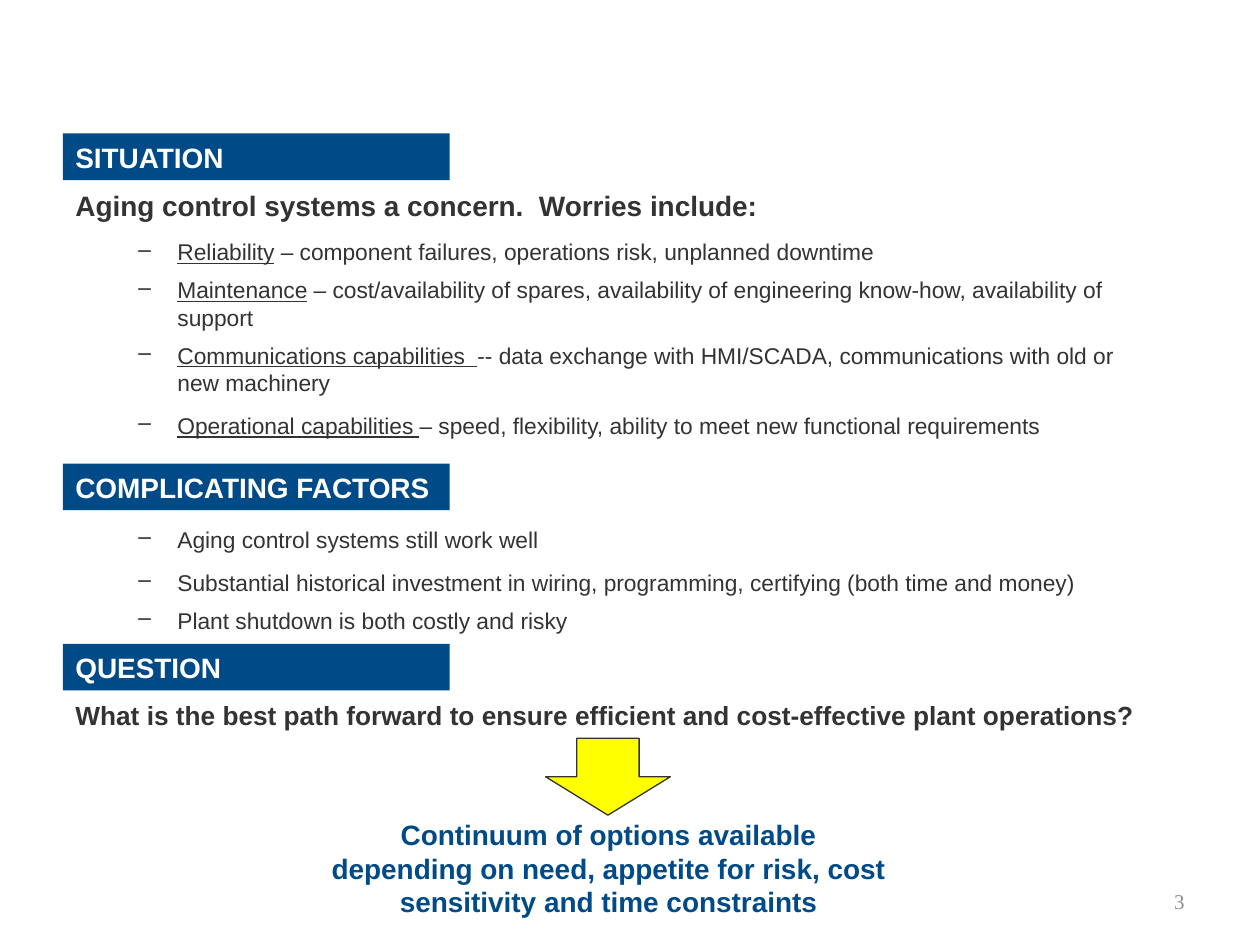
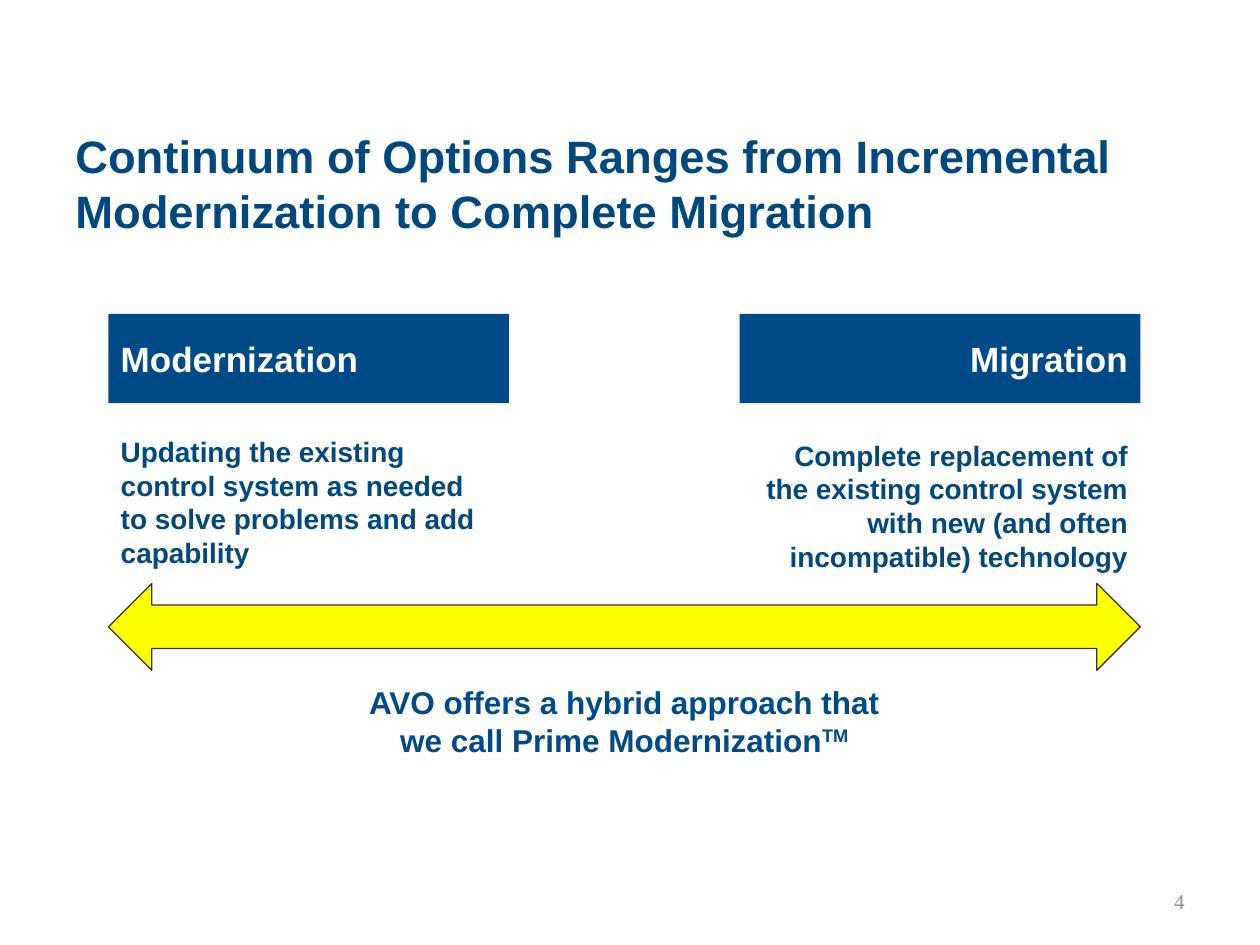
from dataclasses import dataclass

import pptx
import pptx.dml.color
import pptx.enum.shapes
import pptx.enum.text
import pptx.oxml
import pptx.oxml.ns
import pptx.util

Inches = pptx.util.Inches
Pt = pptx.util.Pt
SHAPE = pptx.enum.shapes.MSO_SHAPE
ALIGN = pptx.enum.text.PP_ALIGN
ANCHOR = pptx.enum.text.MSO_ANCHOR


@dataclass(frozen=True)
class Theme:
    font: str = "Arial"
    number_font: str = "Times New Roman"
    band: str = "004B87"
    navy: str = "00487D"
    ink: str = "333333"
    arrow: str = "FFFF00"
    white: str = "FFFFFF"
    grey: str = "909090"
    title: float = 25.9
    option: float = 20
    offer: float = 18
    heading: float = 16
    question: float = 15
    bullet: float = 13
    number: float = 12


T = Theme()
MARGIN = 0.5
BODY_W = 8.65
BAND_SIZE = (3.07, 0.37)


def rgb(value):
    return pptx.dml.color.RGBColor.from_string(value)


def set_format(target, **values):
    for name, value in values.items():
        setattr(target, name, value)


def add_run(p, text, size, color, bold=True, font=T.font, **extra):
    r = p.add_run()
    r.text = text
    set_format(r.font, size=Pt(size), bold=bold, name=font, **extra)
    r.font.color.rgb = rgb(color)
    return r


def add_text(s, box, text, size, color, align=ALIGN.LEFT, anchor=ANCHOR.TOP, **font):
    sp = s.shapes.add_textbox(*map(Inches, box))
    set_format(sp.text_frame, word_wrap=True, vertical_anchor=anchor)
    p = sp.text_frame.paragraphs[0]
    p.alignment = align
    if text:
        add_run(p, text, size, color, **font)
    return sp.text_frame


def add_filled(s, kind, box, fill, line=None):
    sp = s.shapes.add_shape(kind, *map(Inches, box))
    sp.shadow.inherit = False
    sp.fill.solid()
    sp.fill.fore_color.rgb = rgb(fill)
    if line:
        sp.line.color.rgb = rgb(line)
        sp.line.width = Pt(0.75)
    else:
        sp.line.fill.background()
    return sp


def add_band(s, box, text, size, align=ALIGN.LEFT):
    sp = add_filled(s, SHAPE.RECTANGLE, box, T.band)
    set_format(sp.text_frame, word_wrap=True, vertical_anchor=ANCHOR.MIDDLE)
    p = sp.text_frame.paragraphs[0]
    p.alignment = align
    add_run(p, text, size, T.white)


def add_arrow(s, kind, box):
    add_filled(s, kind, box, T.arrow, T.ink)


def add_number(s, number):
    add_text(s, (7.17, 6.95, 2.33, 0.4), str(number), T.number, T.grey,
             ALIGN.RIGHT, ANCHOR.MIDDLE, bold=False, font=T.number_font)


def add_dash(p):
    pPr = p._p.get_or_add_pPr()
    pPr.set("marL", str(Inches(0.81)))
    pPr.set("indent", str(Inches(-0.31)))
    pPr.append(pptx.oxml.parse_xml(
        f'<a:buChar {pptx.oxml.ns.nsdecls("a")} char="–"/>'))


def add_bullets(tf, bullets):
    """Add (underlined term, rest, space before, space after) dash items."""
    for term, rest, before, after in bullets:
        first = tf.paragraphs[0]
        p = tf.add_paragraph() if first.runs else first
        add_dash(p)
        if p is not first:
            p.space_before = Pt(before)
        p.space_after = Pt(after)
        if term:
            add_run(p, term, T.bullet, T.ink, bold=False, underline=True)
        add_run(p, rest, T.bullet, T.ink, bold=False)


def add_section(s, top, label, body_top, body_h, lead="", size=T.heading, bullets=()):
    """Place a label band and, at body_top below the band's top, its text."""
    add_band(s, (MARGIN, top, *BAND_SIZE), label, T.heading)
    tf = add_text(s, (MARGIN, top + body_top, BODY_W, body_h), lead, size, T.ink)
    if lead:
        tf.paragraphs[0].space_after = Pt(6)
    add_bullets(tf, bullets)


def add_option(s, box, name, text, text_top, align):
    """Place an option's band at the top of box and its description below."""
    left, top, width, height = box
    add_band(s, (left, top, width, 0.71), name, T.option, align)
    add_text(s, (left, top + text_top, width, height - text_top), text,
             T.heading, T.navy, align)


def build_situation(s):
    add_section(s, 1.06, "SITUATION", 0.39, 2.2,
                "Aging control systems a concern.  Worries include:", bullets=[
        ("Reliability", " – component failures, operations risk, unplanned downtime", 3, 3),
        ("Maintenance", " – cost/availability of spares, availability of engineering "
                        "know-how, availability of support", 3, 3),
        ("Communications capabilities  ", "-- data exchange with HMI/SCADA, "
                                          "communications with old or new machinery", 3, 3),
        ("Operational capabilities ", "– speed, flexibility, ability to meet new "
                                      "functional requirements", 6, 9),
    ])
    add_section(s, 3.68, "COMPLICATING FACTORS", 0.44, 1, bullets=[
        ("", "Aging control systems still work well", 6, 3),
        ("", "Substantial historical investment in wiring, programming, certifying "
             "(both time and money)", 6, 3),
        ("", "Plant shutdown is both costly and risky", 3, 6),
    ])
    add_section(s, 5.11, "QUESTION", 0.39, 0.35,
                "What is the best path forward to ensure efficient and cost-effective "
                "plant operations?", T.question)
    add_arrow(s, SHAPE.DOWN_ARROW, (4.33, 5.86, 0.99, 0.61))
    add_text(s, (2.52, 6.44, 4.62, 0.91),
             "Continuum of options available depending on need, appetite for risk, "
             "cost sensitivity and time constraints", T.heading, T.band, ALIGN.CENTER)


def build_options(s):
    left, top, width, span = 0.86, 2.49, 3.18, 8.19
    add_text(s, (MARGIN, 1.01, 9.1, 0.88),
             "Continuum of Options Ranges from Incremental Modernization to "
             "Complete Migration", T.title, T.navy, anchor=ANCHOR.MIDDLE)
    add_option(s, (left, top, width, 2.08), "Modernization",
               "Updating the existing control system as needed to solve problems "
               "and add capability", 0.91, ALIGN.LEFT)
    add_option(s, (left + span - width, top, width, 2.11), "Migration",
               "Complete replacement of the existing control system with new "
               "(and often incompatible) technology", 0.94, ALIGN.RIGHT)
    add_arrow(s, SHAPE.LEFT_RIGHT_ARROW, (left, 4.63, span, 0.69))
    tf = add_text(s, (2.82, 5.37, 4.27, 0.71),
                  "AVO offers a hybrid approach that we call Prime Modernization",
                  T.offer, T.band, ALIGN.CENTER)
    mark = add_run(tf.paragraphs[0], "TM", T.offer, T.band)
    mark.font._element.set("baseline", "30000")


def main():
    prs = pptx.Presentation()
    set_format(prs, slide_width=Inches(10), slide_height=Inches(7.5))
    for number, build in enumerate((build_situation, build_options), start=3):
        s = prs.slides.add_slide(prs.slide_layouts[6])
        add_number(s, number)
        build(s)
    prs.save("out.pptx")


if __name__ == "__main__":
    main()
